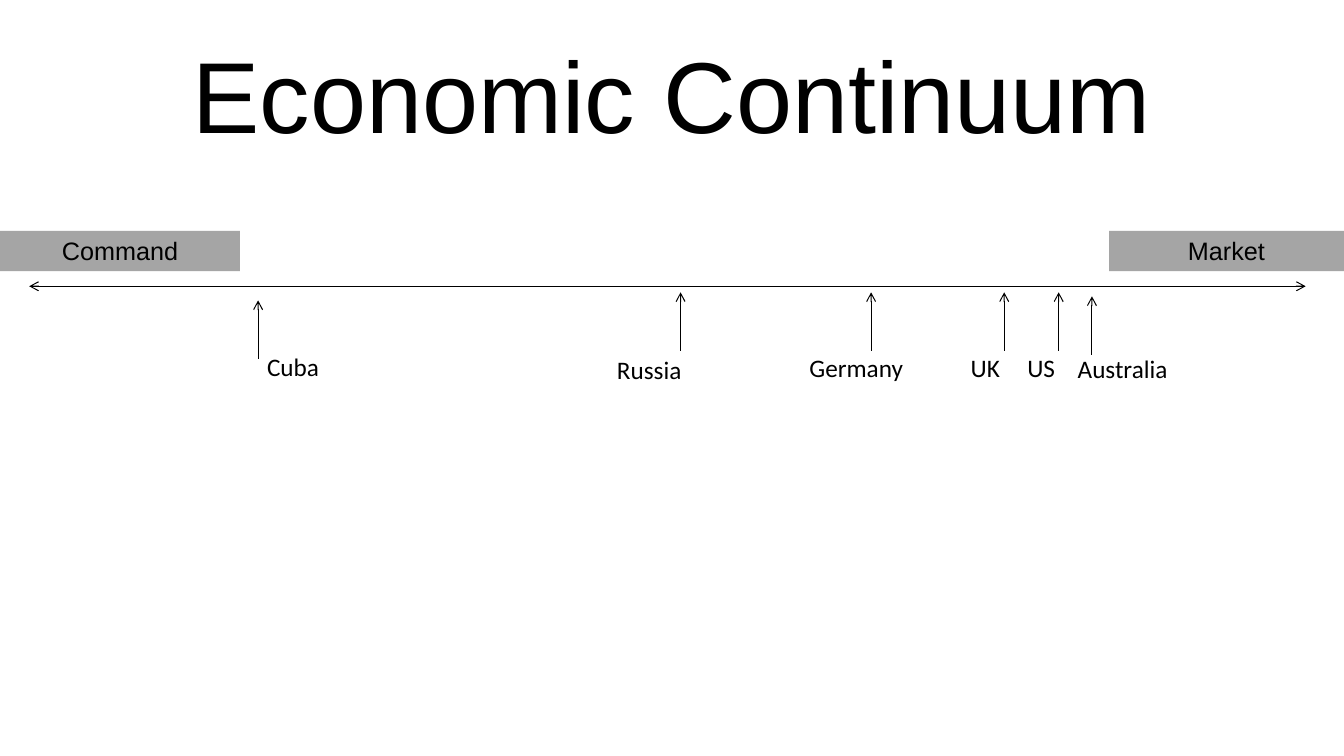
from lxml import etree
from pptx import Presentation
from pptx.dml.color import RGBColor
from pptx.enum import shapes, text
from pptx.oxml.ns import qn
from pptx.util import Inches, Pt

WIDTH, HEIGHT = 13.33, 7.5
BLACK, GREY = "000000", "A5A5A5"
LABEL_HEIGHT = 0.4
ARROW_LENGTH = 0.58

# Country, arrow x, arrow tip y, label left, label top, label width
COUNTRIES = [
    ("Cuba", 2.56, 2.98, 2.55, 3.44, 0.92),
    ("Russia", 6.75, 2.9, 6.02, 3.47, 1.15),
    ("Germany", 8.64, 2.9, 7.93, 3.45, 1.33),
    ("UK", 9.96, 2.9, 9.53, 3.45, 0.63),
    ("US", 10.5, 2.9, 10.09, 3.45, 0.92),
    ("Australia", 10.83, 2.94, 10.59, 3.46, 1.35),
]


def color(value):
    return RGBColor.from_string(value)


def write(shape, words, size, font, align, anchor=text.MSO_ANCHOR.TOP):
    frame = shape.text_frame
    frame.word_wrap = True
    frame.vertical_anchor = anchor
    para = frame.paragraphs[0]
    para.text = words
    para.alignment = align
    para.font.size = Pt(size)
    para.font.name = font
    para.font.color.rgb = color(BLACK)
    return para


def add_arrow(page, start, end, ends=("tailEnd",)):
    points = [Inches(value) for value in (*start, *end)]
    arrow = page.shapes.add_connector(shapes.MSO_CONNECTOR.STRAIGHT, *points)
    arrow.line.color.rgb = color(BLACK)
    arrow.line.width = Pt(0.75)
    outline = arrow.line._get_or_add_ln()
    for name in ends:
        etree.SubElement(outline, qn(f"a:{name}")).set("type", "arrow")
    etree.SubElement(arrow._element.spPr, qn("a:effectLst"))


def add_title(page, left, top, width, height):
    box = page.shapes.add_textbox(*map(Inches, (left, top, width, height)))
    para = write(box, "Economic Continuum", 72, "Arial",
                 text.PP_ALIGN.CENTER, text.MSO_ANCHOR.MIDDLE)
    para.line_spacing = 0.9


def add_end_label(page, words, left, top, width):
    bar = page.shapes.add_shape(
        shapes.MSO_SHAPE.RECTANGLE,
        *map(Inches, (left, top, width, LABEL_HEIGHT)))
    bar.shadow.inherit = False
    bar.fill.solid()
    bar.fill.fore_color.rgb = color(GREY)
    bar.line.fill.background()
    write(bar, words, 18, "Arial", text.PP_ALIGN.CENTER)


def add_country(page, name, x, tip, left, top, width):
    add_arrow(page, (x, tip + ARROW_LENGTH), (x, tip))
    box = page.shapes.add_textbox(
        *map(Inches, (left, top, width, LABEL_HEIGHT)))
    write(box, name, 18, "Calibri", text.PP_ALIGN.LEFT)


def main():
    deck = Presentation()
    deck.slide_width, deck.slide_height = Inches(WIDTH), Inches(HEIGHT)
    page = deck.slides.add_slide(deck.slide_layouts[6])

    add_title(page, 0, 0.67, WIDTH, 0.67)

    # Continuum axis with its two ends
    add_arrow(page, (0.29, 2.84), (12.95, 2.84), ("headEnd", "tailEnd"))
    add_end_label(page, "Command", 0, 2.29, 2.38)
    add_end_label(page, "Market", 11, 2.29, WIDTH - 11)

    # Countries along the axis
    for country in COUNTRIES:
        add_country(page, *country)

    deck.save("out.pptx")


if __name__ == "__main__":
    main()
